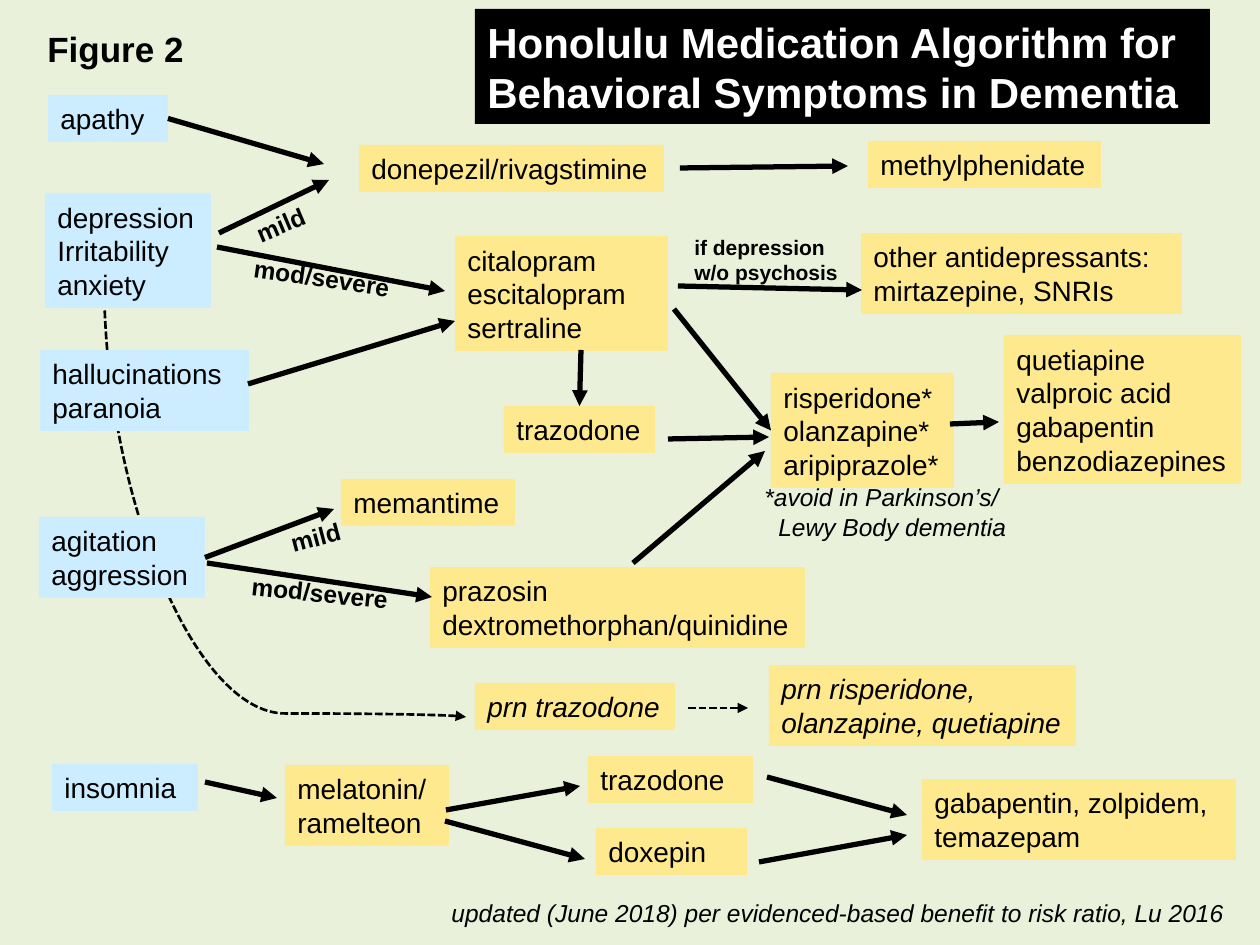
from lxml.etree import SubElement
from pptx import Presentation
from pptx.dml.color import RGBColor
from pptx.enum.dml import MSO_LINE
from pptx.enum.shapes import MSO_CONNECTOR, MSO_SHAPE
from pptx.enum.text import MSO_AUTO_SIZE, PP_ALIGN
from pptx.oxml.ns import qn
from pptx.util import Pt

PX = 914400 / 126
BLACK = RGBColor(0x00, 0x00, 0x00)
WHITE = RGBColor(0xFF, 0xFF, 0xFF)
GREEN = RGBColor(0xE9, 0xF1, 0xDB)
AMBER = RGBColor(0xFF, 0xE9, 0x8F)
BLUE = RGBColor(0xCC, 0xEC, 0xFF)

SYMPTOMS = {
    "apathy": (48, 95, 120, ["apathy"]),
    "depression": (45, 193, 166, ["depression", "Irritability", "anxiety"]),
    "hallucinations": (40, 350, 209, ["hallucinations", "paranoia"]),
    "agitation": (39, 517, 166, ["agitation", "aggression"]),
    "insomnia": (52, 764, 146, ["insomnia"]),
}
DRUGS = {
    "donepezil": (359, 145, 305, ["donepezil/rivagstimine"]),
    "methylphenidate": (868, 141, 233, ["methylphenidate"]),
    "trazodone": (504, 406, 151, ["trazodone"]),
    "antipsychotics": (771, 373, 183, ["risperidone*", "olanzapine*", "aripiprazole*"]),
    "quetiapine": (1004, 335, 237, ["quetiapine", "valproic acid", "gabapentin", "benzodiazepines"]),
    "memantime": (341, 479, 174, ["memantime"]),
    "prazosin": (430, 567, 375, ["prazosin", "dextromethorphan/quinidine"]),
}
WIDE_DRUGS = {
    "antidepressants": (861, 233, 321, ["other antidepressants:", "mirtazepine, SNRIs"]),
    "sleep trazodone": (588, 756, 165, ["trazodone"]),
    "melatonin": (285, 765, 164, ["melatonin/", "ramelteon"]),
    "doxepin": (596, 828, 151, ["doxepin"]),
    "gabapentin": (922, 779, 314, ["gabapentin, zolpidem,", "temazepam"]),
}
PRN_DRUGS = {
    "prn trazodone": (475, 683, 200, ["prn trazodone"]),
    "prn risperidone": (769, 665, 307, ["prn risperidone,", "olanzapine, quetiapine"]),
}
SSRIS = (455, 236, 213, 115, ["citalopram", "escitalopram sertraline"])
TITLE = (475, 9, 735, 115, ["Honolulu Medication Algorithm for Behavioral Symptoms in Dementia"])

ARROWS = [
    (219, 233, 329, 180), (217, 247, 445, 291), (248, 384, 455, 321),
    (678, 286, 862, 290), (950, 424, 999, 422), (668, 439, 769, 437),
    (207, 563, 432, 597), (633, 563, 765, 451), (680, 168, 848, 166),
    (445, 821, 585, 859), (446, 810, 580, 786), (767, 777, 907, 815),
    (759, 862, 907, 835), (205, 782, 277, 798),
]
JOINED_ARROWS = [
    ((168, 118, 324, 164), ("apathy", 3), None),
    ((205, 557, 334, 509), ("agitation", 3), None),
    ((674, 309, 771, 430), None, ("antipsychotics", 1)),
    ((581, 350, 580, 406), None, ("trazodone", 0)),
]
BRANCH_LABELS = [
    (243, 203, 77, "mild", 337.1),
    (278, 515, 81, "mild", 345),
    (241, 258, 178, "mod/severe", 8.3),
    (239, 573, 185, "mod/severe", 6.1),
]


def px(*values):
    return [round(v * PX) for v in values]


def fill_text(shape, lines, size, color=BLACK, bold=False, italic=False, wrap=True):
    tf = shape.text_frame
    tf.text = "\n".join(lines)
    tf.word_wrap = wrap
    tf.auto_size = MSO_AUTO_SIZE.SHAPE_TO_FIT_TEXT
    for p in tf.paragraphs:
        p.alignment = PP_ALIGN.LEFT
        for r in p.runs:
            f = r.font
            f.name, f.size, f.bold, f.italic = "Arial", Pt(size), bold, italic
            f.color.rgb = color
    return tf


def add_box(s, x, y, w, h, lines, fill, size=16, **style):
    sp = s.shapes.add_shape(MSO_SHAPE.RECTANGLE, *px(x, y, w, h))
    sp.shadow.inherit = False
    sp.fill.solid()
    sp.fill.fore_color.rgb = fill
    sp.line.fill.background()
    fill_text(sp, lines, size, **style)
    return sp


def add_label(s, x, y, w, h, lines, size, **style):
    sp = s.shapes.add_textbox(*px(x, y, w, h))
    return sp, fill_text(sp, lines, size, **style)


def add_arrow(s, ends, kind=MSO_CONNECTOR.STRAIGHT, dashed=False):
    c = s.shapes.add_connector(kind, *px(*ends))
    c.line.color.rgb = BLACK
    c.line.width = Pt(1.5 if dashed else 3)
    if dashed:
        c.line.dash_style = MSO_LINE.SQUARE_DOT
    SubElement(c.line._get_or_add_ln(), qn("a:tailEnd"), type="triangle")
    SubElement(c._element.spPr, qn("a:effectLst"))
    return c


def main():
    prs = Presentation()
    prs.slide_width, prs.slide_height = px(1260, 945)
    s = prs.slides.add_slide(prs.slide_layouts[6])
    s.background.fill.solid()
    s.background.fill.fore_color.rgb = GREEN

    curve = add_arrow(s, (504, 317, 66, 679), MSO_CONNECTOR.CURVE, dashed=True)
    spPr = curve._element.spPr
    spPr.find(qn("a:xfrm")).set("rot", "16200000")
    geom = spPr.find(qn("a:prstGeom"))
    guides = geom.find(qn("a:avLst"))
    if guides is None:
        guides = SubElement(geom, qn("a:avLst"))
    SubElement(guides, qn("a:gd"), name="adj1", fmla="val 99200")

    boxes = {}
    for group, fill, style in [
        (SYMPTOMS, BLUE, {}),
        (DRUGS, AMBER, {"wrap": False}),
        (WIDE_DRUGS, AMBER, {}),
        (PRN_DRUGS, AMBER, {"wrap": False, "italic": True}),
    ]:
        for name, (x, y, w, lines) in group.items():
            h = 13 + 34 * len(lines)
            boxes[name] = add_box(s, x, y, w, h, lines, fill, **style)
    add_box(s, *SSRIS, AMBER)
    add_box(s, *TITLE, BLACK, size=24, color=WHITE, bold=True)

    for ends in ARROWS:
        add_arrow(s, ends)
    for ends, start, stop in JOINED_ARROWS:
        c = add_arrow(s, ends)
        if start:
            c.begin_connect(boxes[start[0]], start[1])
        if stop:
            c.end_connect(boxes[stop[0]], stop[1])
    add_arrow(s, (688, 708, 748, 708), dashed=True)

    for x, y, w, text, angle in BRANCH_LABELS:
        sp, tf = add_label(s, x, y, w, 43, [text], 14, bold=True)
        sp.rotation = angle
    add_label(s, 682, 228, 186, 63, ["if depression w/o psychosis"], 12, bold=True)
    add_label(s, 35, 21, 163, 55, ["Figure 2"], 20, bold=True, wrap=False)
    sp, tf = add_label(s, 752, 476, 291, 72, ["*avoid in Parkinson’s/", "Lewy Body dementia"], 14, italic=True)
    tf.paragraphs[1]._p.get_or_add_pPr().set("marL", str(px(14)[0]))
    source = "updated (June 2018) per evidenced-based benefit to risk ratio, Lu 2016"
    sp, tf = add_label(s, 437, 892, 800, 43, [source], 14, italic=True, wrap=False)
    tf.paragraphs[0].alignment = PP_ALIGN.RIGHT

    prs.save("out.pptx")


if __name__ == "__main__":
    main()
